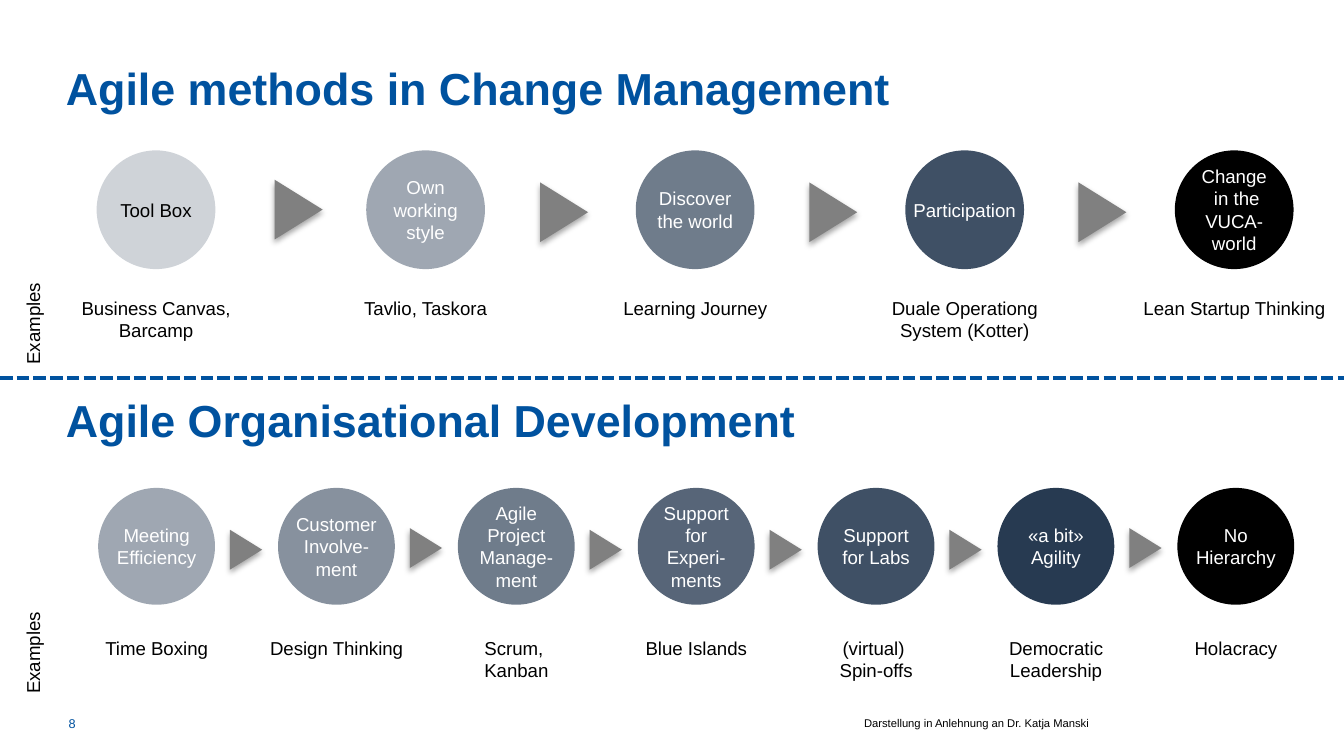
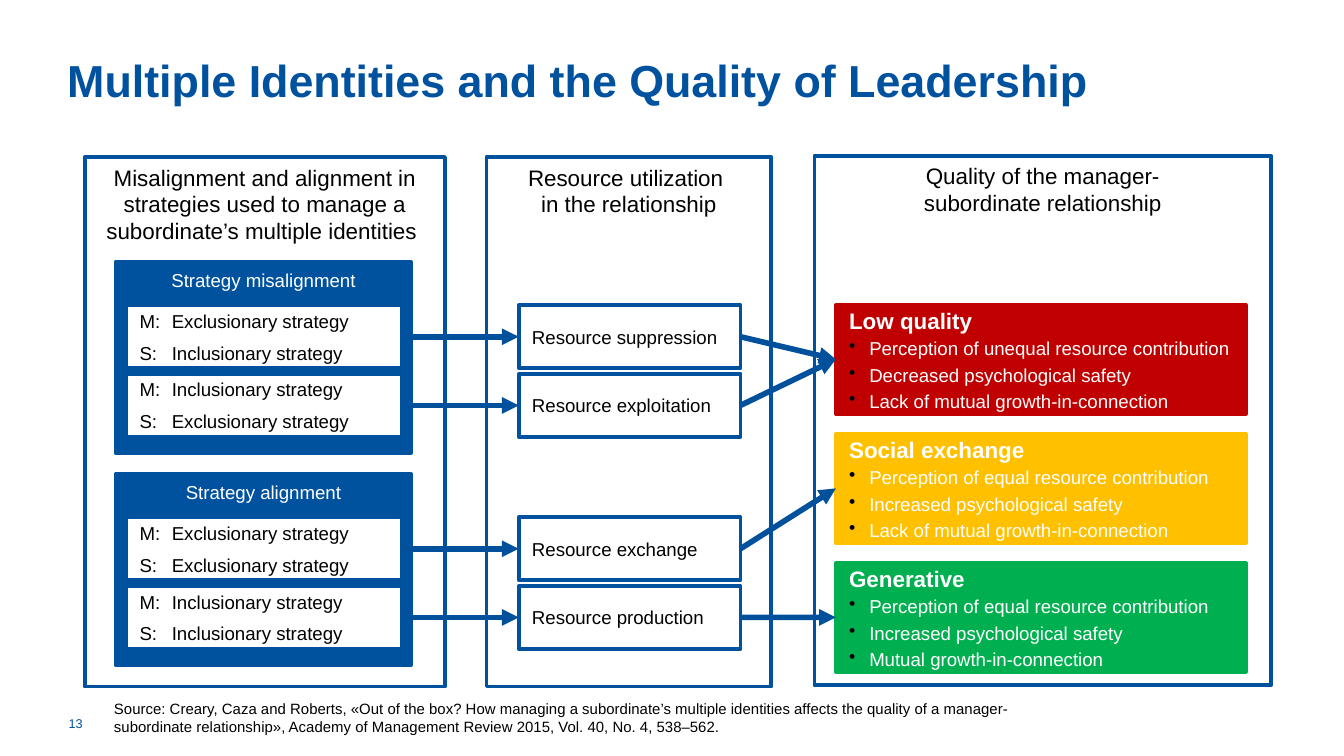
from lxml import etree
from pptx import Presentation
from pptx import util as u
from pptx.dml.color import RGBColor
from pptx.enum import dml, shapes, text
from pptx.oxml import ns

BLUE, ARROW_BLUE, NAVY, GREY = "00529F", "00509B", "10253F", "808080"
BLACK, WHITE = "000000", "FFFFFF"
LEFT, CENTER = text.PP_ALIGN.LEFT, text.PP_ALIGN.CENTER
TOP, MIDDLE = text.MSO_ANCHOR.TOP, text.MSO_ANCHOR.MIDDLE
RECTANGLE = shapes.MSO_SHAPE.RECTANGLE
INSETS = (7.2, 3.6, 7.2, 3.6)
FLUSH = (0, 0, 0, 0)
SNUG = (2, 2, 2, 2)


def color(value):
    """Turn a hex string into a colour."""
    return RGBColor.from_string(value)


def child(parent, tag, **attributes):
    """Append a DrawingML element to a parent."""
    return etree.SubElement(parent, ns.qn(f"a:{tag}"), attributes)


class Style:
    """Holds the deck's look and the page being drawn."""

    font = "Arial"

    def __init__(self, width, height):
        """Start a deck of the given size."""
        self.deck = Presentation()
        self.deck.slide_width, self.deck.slide_height = u.Pt(width), u.Pt(height)
        self.page = None

    def new_page(self, number):
        """Add a blank page with its number."""
        self.page = self.deck.slides.add_slide(self.deck.slide_layouts[6])
        self.label((36.7, 376.6, 59, 21.6), [str(number)], size=6.8, ink=BLUE,
                   anchor=MIDDLE, insets=(0, 3.6, 7.2, 3.6))

    def fill_text(self, box, lines, size=10, ink=BLACK, bold=False, align=LEFT,
                  anchor=TOP, insets=INSETS, wrap=True, hang=0, gap=0):
        """Fill a box with paragraphs in one style."""
        frame = box.text_frame
        frame.word_wrap, frame.vertical_anchor = wrap, anchor
        (frame.margin_left, frame.margin_top,
         frame.margin_right, frame.margin_bottom) = map(u.Pt, insets)
        for index, line in enumerate(lines):
            para = frame.paragraphs[0] if index == 0 else frame.add_paragraph()
            para.text = line
            if index:
                para.space_before = u.Pt(gap)
            self.style_para(para, size, ink, bold, align, hang)

    def style_para(self, para, size, ink, bold=False, align=LEFT, hang=0, bullet=None):
        """Set indent, bullet, alignment and font of a paragraph."""
        para.alignment = align
        if hang:
            props = para._p.get_or_add_pPr()
            props.set("marL", str(u.Pt(hang)))
            props.set("indent", str(-u.Pt(hang)))
            if bullet:
                child(child(props, "buClr"), "srgbClr", val=BLACK)
                child(props, "buChar", char=bullet)
        font = para.font
        font.name, font.size, font.bold = self.font, u.Pt(size), bold
        font.color.rgb = color(ink)

    def label(self, place, lines, turn=0, **look):
        """Add a text box."""
        box = self.page.shapes.add_textbox(*map(u.Pt, place))
        box.rotation = turn
        self.fill_text(box, lines, **look)

    def title(self, place, words):
        """Add a heading."""
        self.label(place, [words], size=24, ink=BLUE, bold=True, anchor=MIDDLE, insets=FLUSH)

    def shape(self, kind, place, fill, line=None, alpha=100):
        """Add a filled preset shape."""
        box = self.page.shapes.add_shape(kind, *map(u.Pt, place))
        box.shadow.inherit = False
        box.fill.solid()
        box.fill.fore_color.rgb = color(fill)
        if alpha < 100:
            child(box.element.spPr.find(ns.qn("a:solidFill"))[0], "alpha", val=str(alpha * 1000))
        if line:
            box.line.color.rgb, box.line.width = color(line), u.Pt(2)
        else:
            box.line.fill.background()
        return box

    def panel(self, place, lines, fill=WHITE, line=BLUE, **look):
        """Add an outlined rectangle with text."""
        box = self.shape(RECTANGLE, place, fill, line)
        self.fill_text(box, lines, **look)
        return box

    def circle(self, center, top, size, words, alpha, ink=WHITE):
        """Add a stage circle."""
        box = self.shape(shapes.MSO_SHAPE.OVAL, (center - size / 2, top, size, size),
                         BLACK if alpha == 100 else NAVY, alpha=alpha)
        self.fill_text(box, [words], ink=ink, align=CENTER, anchor=MIDDLE, insets=FLUSH,
                       wrap=words != "Participation")

    def triangle(self, center, middle, base, depth):
        """Add a shadowed triangle pointing right."""
        box = self.shape(shapes.MSO_SHAPE.ISOSCELES_TRIANGLE,
                         (center - base / 2, middle - depth / 2, base, depth), GREY)
        box.rotation = 90
        shadow = child(box.element.spPr.find(ns.qn("a:effectLst")), "outerShdw",
                       blurRad=str(u.Pt(3.1)), dist=str(u.Pt(1.8)), dir="5400000",
                       algn="t", rotWithShape="0")
        child(child(shadow, "srgbClr", val=BLACK), "alpha", val="35000")

    def connector(self, ends, ink, width):
        """Add a straight line without a shadow."""
        line = self.page.shapes.add_connector(shapes.MSO_CONNECTOR.STRAIGHT, *map(u.Pt, ends))
        line.line.color.rgb, line.line.width = color(ink), u.Pt(width)
        child(line.element.spPr, "effectLst")
        return line

    def divider(self, middle):
        """Add a dashed line across the page."""
        line = self.connector((0, middle, 720, middle), BLUE, 2.25)
        line.line.dash_style = dml.MSO_LINE.SQUARE_DOT

    def arrow(self, start, end):
        """Join the right side of one box to the left side of another."""
        line = self.connector((0, 0, 0, 0), ARROW_BLUE, 3)
        line.begin_connect(start, 3)
        line.end_connect(end, 1)
        child(line.element.spPr.find(ns.qn("a:ln")), "tailEnd", type="triangle")

    def outcome(self, place, fill, heading, points):
        """Add a coloured box with a heading and bullets."""
        box = self.panel(place, [heading], fill, fill, size=12, ink=WHITE, bold=True,
                         anchor=MIDDLE, hang=17.3)
        for point in points:
            para = box.text_frame.add_paragraph()
            para.text = point
            para.space_before = u.Pt(2)
            self.style_para(para, 10, WHITE, hang=10.8, bullet="•")
        return box

    def stages(self, stages, first, step, top, size, label_top, label_width):
        """Add a row of circles with an example under each."""
        for index, (words, alpha, example) in enumerate(stages):
            center = first + index * step
            self.label((center - label_width / 2, label_top, label_width, 33), [example],
                       align=CENTER, insets=SNUG)
            self.circle(center, top, size, words, alpha, BLACK if alpha == 20 else WHITE)


CHANGE_STAGES = [
    ("Tool Box", 20, "Business Canvas, Barcamp"),
    ("Own working style", 40, "Tavlio, Taskora"),
    ("Discover the world", 60, "Learning Journey"),
    ("Participation", 80, "Duale Operationg System (Kotter)"),
    ("Change\n in the VUCA-world", 100, "Lean Startup Thinking"),
]
ORGANISATION_STAGES = [
    ("Meeting Efficiency", 40, "Time Boxing"),
    ("Customer\nInvolve-ment", 50, "Design Thinking"),
    ("Agile Project Manage-ment", 60, "Scrum, \nKanban"),
    ("Support for Experi-ments", 70, "Blue Islands"),
    ("Support for Labs", 80, "(virtual) \nSpin-offs"),
    ("«a bit» Agility", 90, "Democratic Leadership"),
    ("No Hierarchy", 100, "Holacracy"),
]
STRATEGY_GROUPS = [
    ("Strategy misalignment", [("Exclusionary", "Inclusionary", "Resource suppression"),
                               ("Inclusionary", "Exclusionary", "Resource exploitation")]),
    ("Strategy alignment", [("Exclusionary", "Exclusionary", "Resource exchange"),
                            ("Inclusionary", "Inclusionary", "Resource production")]),
]
OUTCOMES = [
    ("C00000", "Low quality", ["Perception of unequal resource contribution",
                               "Decreased psychological safety",
                               "Lack of mutual growth-in-connection"]),
    ("FFC000", "Social exchange", ["Perception of equal resource contribution",
                                   "Increased psychological safety",
                                   "Lack of mutual growth-in-connection"]),
    ("00B050", "Generative", ["Perception of equal resource contribution",
                              "Increased psychological safety",
                              "Mutual growth-in-connection"]),
]
COLUMNS = [
    ((45.4, 84.2, 193, 283.7), "Misalignment and alignment in strategies used to manage "
                               "a subordinate’s multiple identities "),
    ((260.6, 84.2, 152.6, 283.7), "Resource utilization \nin the relationship"),
    ((436.3, 83.5, 244.8, 283.7), "Quality of the manager-\nsubordinate relationship"),
]


def agile_page(style):
    """Draw the two rows of agile stages."""
    style.new_page(8)
    style.title((35.3, 19.4, 648, 55.4), "Agile methods in Change Management")
    style.stages(CHANGE_STAGES, 83.6, 144.4, 80.6, 63.6, 157, 112.3)
    style.stages(ORGANISATION_STAGES, 83.9, 96.36, 261.4, 62.6, 339.1, 82.8)
    style.title((35.3, 193, 568.8, 64), "Agile Organisational Development")
    style.divider(202.5)
    for top in (158.4, 334.8):
        style.label((-16.6, top, 68.4, 19.4), ["Examples"], turn=270)
    for center, middle in ((160, 112.3), (302.2, 113.7), (446.4, 113.7), (590.6, 113.7)):
        style.triangle(center, middle, 32, 25.7)
    for index in range(6):
        style.triangle(131.8 + index * 96.36, 293.6 if index in (1, 5) else 294.5, 21.4, 17.3)
    style.label((455.8, 380.2, 145.4, 14.4), ["Darstellung in Anlehnung an Dr. Katja Manski"], size=6)


def identities_page(style):
    """Draw the path from strategies to relationship quality."""
    style.new_page(13)
    style.label((54, 371.5, 532.8, 26.6), [
        "Source: Creary, Caza and Roberts, «Out of the box? How managing a subordinate’s "
        "multiple identities affects the quality of a manager-subordinate relationship», "
        "Academy of Management Review 2015, Vol. 40, No. 4, 538–562."], size=8)
    style.title((36, 15.1, 658.8, 55.4), "Multiple Identities and the Quality of Leadership")
    for place, heading in COLUMNS:
        style.panel(place, [heading], size=12, align=CENTER)
    strategies, resources = [], []
    for group, (heading, pairs) in enumerate(STRATEGY_GROUPS):
        top = 140.4 + group * 113.6
        style.panel((61.9, top, 158.4, 102.2), [heading], fill=BLUE, ink=WHITE, align=CENTER)
        for row, (manager, subordinate, resource) in enumerate(pairs):
            row_top = top + 23.1 + row * 36.8
            strategies.append(style.panel(
                (67.7, row_top, 147.6, 33.8),
                [f"M: \t{manager} strategy", f"S: \t{subordinate} strategy"],
                anchor=MIDDLE, hang=17.3, gap=5))
            resources.append(style.panel((277.9, row_top, 118.8, 33.8), [resource],
                                         anchor=MIDDLE, hang=17.3))
    outcomes = [style.outcome((447.8, 163.4 + index * 69.1, 219.6, 58.3), *outcome)
                for index, outcome in enumerate(OUTCOMES)]
    for strategy, resource, target in zip(strategies, resources, (0, 0, 1, 2)):
        style.arrow(strategy, resource)
        style.arrow(resource, outcomes[target])


def main():
    """Build and save the deck."""
    style = Style(720, 405)
    agile_page(style)
    identities_page(style)
    style.deck.save("out.pptx")


if __name__ == "__main__":
    main()
